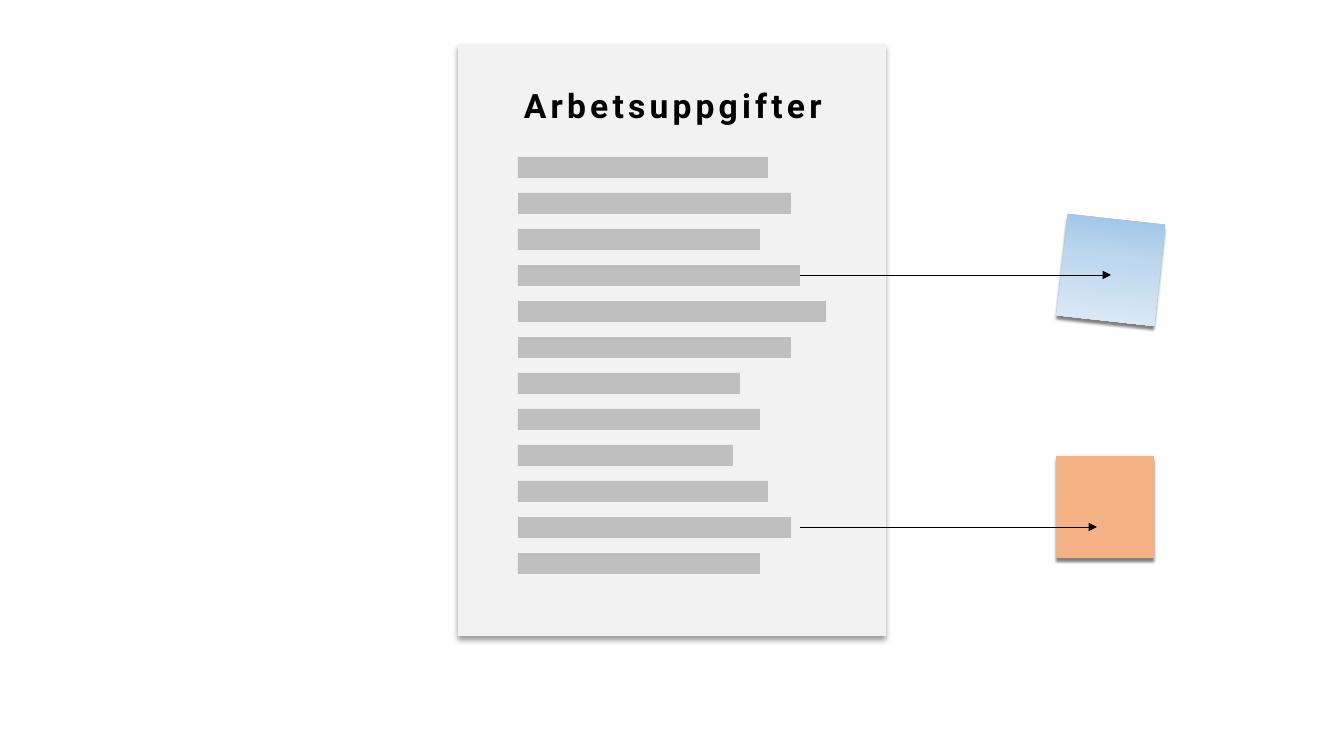
from lxml import etree
from pptx import Presentation
from pptx.dml.color import RGBColor
from pptx.enum.shapes import MSO_CONNECTOR, MSO_SHAPE
from pptx.enum.text import PP_ALIGN
from pptx.oxml.ns import qn
from pptx.util import Pt

RECT = MSO_SHAPE.RECTANGLE
STRAIGHT = MSO_CONNECTOR.STRAIGHT
CENTER = PP_ALIGN.CENTER

EMU_PER_PX = 914400 / 100.8
BLACK = RGBColor(0x00, 0x00, 0x00)
PAPER = RGBColor(0xF2, 0xF2, 0xF2)
BAR = RGBColor(0xBF, 0xBF, 0xBF)
ORANGE = RGBColor(0xF4, 0xB1, 0x83)
BLUES = [
    (0, RGBColor(0x9D, 0xC3, 0xE6)),
    (41, RGBColor(0xBD, 0xD7, 0xEE)),
    (100, RGBColor(0xDE, 0xEB, 0xF7)),
]

BAR_WIDTHS = [250, 273, 242, 282, 308, 273, 222, 242, 215, 250, 273, 242]
BAR_LEFT, BAR_TOP, BAR_HEIGHT, BAR_PITCH = 518, 157, 21, 36
NOTE_SIZE = (98, 102)


def px(n):
    return round(n * EMU_PER_PX)


def add(parent, tag, **attrs):
    """Append a DrawingML child element with the given attributes."""
    values = {k: str(v) for k, v in attrs.items()}
    return etree.SubElement(parent, qn(f"a:{tag}"), values)


class Sketch:
    """Holds the text style and the slide being drawn."""

    font = {"name": "Roboto", "size": Pt(24), "bold": True}

    def __init__(self, slide):
        self.shapes = slide.shapes

    def rect(self, x, y, w, h, color=None, rotation=0):
        s = self.shapes.add_shape(RECT, px(x), px(y), px(w), px(h))
        s.shadow.inherit = False
        s.line.fill.background()
        s.rotation = rotation
        if color is not None:
            s.fill.solid()
            s.fill.fore_color.rgb = color
        return s

    def gradient(self, s, stops):
        """Fill a shape from top to bottom with (percent, colour) stops."""
        s.fill.gradient()
        s.fill.gradient_angle = 270
        stop_list = s.element.spPr.find(f".//{qn('a:gsLst')}")
        stop_list.clear()
        for percent, color in stops:
            stop = add(stop_list, "gs", pos=percent * 1000)
            add(stop, "srgbClr", val=color)

    def shadow(self, s, blur, opacity):
        """Drop a black shadow 3 pt straight down; blur is in points."""
        effects = s.element.spPr.find(qn("a:effectLst"))
        outer = add(effects, "outerShdw", blurRad=Pt(blur), dist=Pt(3),
                    dir=90 * 60000, algn="t", rotWithShape=0)
        color = add(outer, "srgbClr", val=BLACK)
        add(color, "alpha", val=opacity * 1000)

    def heading(self, text, x, y, w, h):
        s = self.shapes.add_textbox(px(x), px(y), px(w), px(h))
        tf = s.text_frame
        tf.word_wrap = True
        p = tf.paragraphs[0]
        p.alignment = CENTER
        r = p.add_run()
        r.text = text
        for name, value in self.font.items():
            setattr(r.font, name, value)
        r.font.color.rgb = BLACK
        r.font._element.set("spc", "300")

    def arrow(self, x1, x2, y):
        s = self.shapes.add_connector(STRAIGHT, px(x1), px(y), px(x2), px(y))
        s.line.width = Pt(0.5)
        s.line.color.rgb = BLACK
        add(s.line._get_or_add_ln(), "tailEnd", type="triangle")
        add(s.element.spPr, "effectLst")


def main():
    prs = Presentation()
    prs.slide_width, prs.slide_height = px(1344), px(756)
    sketch = Sketch(prs.slides.add_slide(prs.slide_layouts[6]))

    page = sketch.rect(458, 44, 428, 592, PAPER)
    sketch.shadow(page, blur=4, opacity=40)
    sketch.heading("Arbetsuppgifter", 476, 80, 394, 75)
    for i, width in enumerate(BAR_WIDTHS):
        sketch.rect(BAR_LEFT, BAR_TOP + i * BAR_PITCH, width, BAR_HEIGHT, BAR)

    blue_note = sketch.rect(1062, 219, *NOTE_SIZE, rotation=6.3)
    sketch.gradient(blue_note, BLUES)
    orange_note = sketch.rect(1056, 456, *NOTE_SIZE, ORANGE)
    for note in (blue_note, orange_note):
        sketch.shadow(note, blur=2, opacity=49)

    sketch.arrow(800, 1097, 527)
    sketch.arrow(800, 1111, 275)
    prs.save("out.pptx")


if __name__ == "__main__":
    main()
